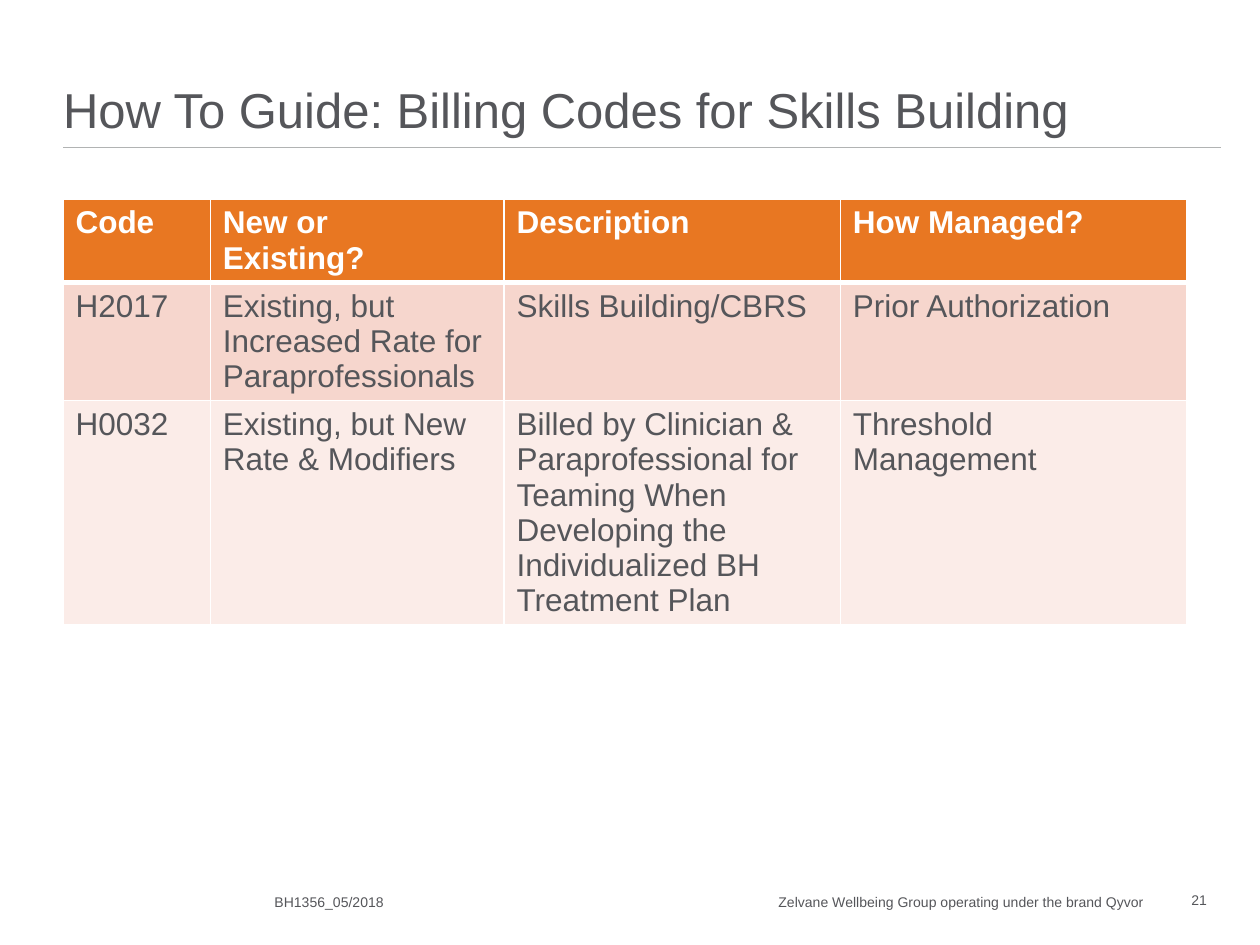
"""Build the billing codes slide for skills building."""
from dataclasses import dataclass

from lxml import etree
from pptx import Presentation
from pptx.dml.color import RGBColor
from pptx.enum import text
from pptx.oxml import ns
from pptx.util import Inches, Pt


@dataclass(frozen=True)
class Theme:
    font: str = "Arial"
    ink: str = "55565A"
    rule: str = "B1B3B3"
    white: str = "FFFFFF"
    header: str = "E87722"
    bands: tuple = ("F6D6CD", "FBECE8")
    title_size: int = 28
    table_size: int = 18
    footer_size: int = 8


@dataclass(frozen=True)
class BillingCode:
    code: str
    status: str
    description: str
    managed: str


THEME = Theme()
HEADINGS = BillingCode("Code", "New or\nExisting?", "Description", "How Managed?")
CODES = (
    BillingCode("H2017", "Existing, but Increased Rate for Paraprofessionals",
                "Skills Building/CBRS", "Prior Authorization"),
    BillingCode("H0032", "Existing, but New Rate & Modifiers",
                "Billed by Clinician & Paraprofessional for Teaming When "
                "Developing the Individualized BH Treatment Plan",
                "Threshold Management"),
)
COLUMN_WIDTHS = (1.17, 2.33, 2.67, 2.75)
ROW_HEIGHTS = (0.65, 0.94, 1.78)


def style_text(frame, size: int, color: str = THEME.ink, bold: bool = False) -> None:
    """Format every run in a text frame."""
    for paragraph in frame.paragraphs:
        for run in paragraph.runs:
            run.font.name = THEME.font
            run.font.size = Pt(size)
            run.font.bold = bold
            run.font.color.rgb = RGBColor.from_string(color)


def clear_insets(frame) -> None:
    """Remove the inner margins of a text frame."""
    frame.margin_left = frame.margin_top = frame.margin_right = frame.margin_bottom = 0


def border_cell(cell, widths: dict) -> None:
    """Draw white borders, given in points by side, ahead of the cell fill."""
    properties = cell._tc.get_or_add_tcPr()
    for index, (side, width) in enumerate(widths.items()):
        line = etree.Element(ns.qn(f"a:ln{side}"), w=str(Pt(width)))
        fill = etree.SubElement(line, ns.qn("a:solidFill"))
        etree.SubElement(fill, ns.qn("a:srgbClr"), val=THEME.white)
        properties.insert(index, line)


def add_heading(slide) -> None:
    """Fill the title placeholder and draw the rule beneath it."""
    title = slide.shapes.title
    title.left, title.top, title.width, title.height = map(Inches, (0.5, 0.42, 9.18, 0.68))
    frame = title.text_frame
    frame.text = "How To Guide: Billing Codes for Skills Building"
    frame.auto_size = text.MSO_AUTO_SIZE.NONE
    frame.vertical_anchor = text.MSO_ANCHOR.BOTTOM
    frame.paragraphs[0].alignment = text.PP_ALIGN.LEFT
    clear_insets(frame)
    style_text(frame, THEME.title_size)

    rule = slide.shapes.add_connector(1, *map(Inches, (0.5, 1.17, 9.69, 1.17)))
    rule.line.color.rgb = RGBColor.from_string(THEME.rule)
    rule.line.width = Pt(1)
    etree.SubElement(rule._element.spPr, ns.qn("a:effectLst"))


def add_codes(slide) -> None:
    """Add the table of billing codes."""
    records = (HEADINGS, *CODES)
    table = slide.shapes.add_table(
        len(records), len(COLUMN_WIDTHS), Inches(0.5), Inches(1.58),
        Inches(sum(COLUMN_WIDTHS)), Inches(sum(ROW_HEIGHTS))).table
    for column, width in zip(table.columns, COLUMN_WIDTHS):
        column.width = Inches(width)
    fills = (THEME.header, *THEME.bands)
    for row, height, record, fill in zip(table.rows, ROW_HEIGHTS, records, fills):
        row.height = Inches(height)
        heading = record is HEADINGS
        top = 3 if record is CODES[0] else 1
        values = (record.code, record.status, record.description, record.managed)
        for cell, value in zip(row.cells, values):
            cell.text_frame.text = value
            style_text(cell.text_frame, THEME.table_size,
                       THEME.white if heading else THEME.ink, heading)
            cell.fill.solid()
            cell.fill.fore_color.rgb = RGBColor.from_string(fill)
            border_cell(cell, {"L": 1, "R": 1, "T": top, "B": 3 if heading else 1})


def add_footer(slide) -> None:
    """Add the document number, the organisation line and the page number."""
    footer = slide.shapes.add_textbox(*map(Inches, (2.08, 7.04, 7.17, 0.24))).text_frame
    footer.word_wrap = True
    footer.text = "BH1356_05/2018\tZelvane Wellbeing Group operating under the brand Qyvor"
    properties = footer.paragraphs[0]._p.get_or_add_pPr()
    stops = etree.SubElement(properties, ns.qn("a:tabLst"))
    etree.SubElement(stops, ns.qn("a:tab"), pos=str(Inches(4)), algn="l")
    style_text(footer, THEME.footer_size)

    page = slide.shapes.add_textbox(*map(Inches, (9.25, 7.04, 0.33, 0.21))).text_frame
    page.text = "21"
    page.word_wrap = False
    page.vertical_anchor = text.MSO_ANCHOR.MIDDLE
    page.paragraphs[0].alignment = text.PP_ALIGN.RIGHT
    clear_insets(page)
    style_text(page, THEME.footer_size)


def main() -> None:
    """Build and save the presentation."""
    deck = Presentation()
    deck.slide_width, deck.slide_height = Inches(10), Inches(7.5)
    slide = deck.slides.add_slide(deck.slide_layouts[5])
    add_heading(slide)
    add_codes(slide)
    add_footer(slide)
    deck.save("out.pptx")


if __name__ == "__main__":
    main()
